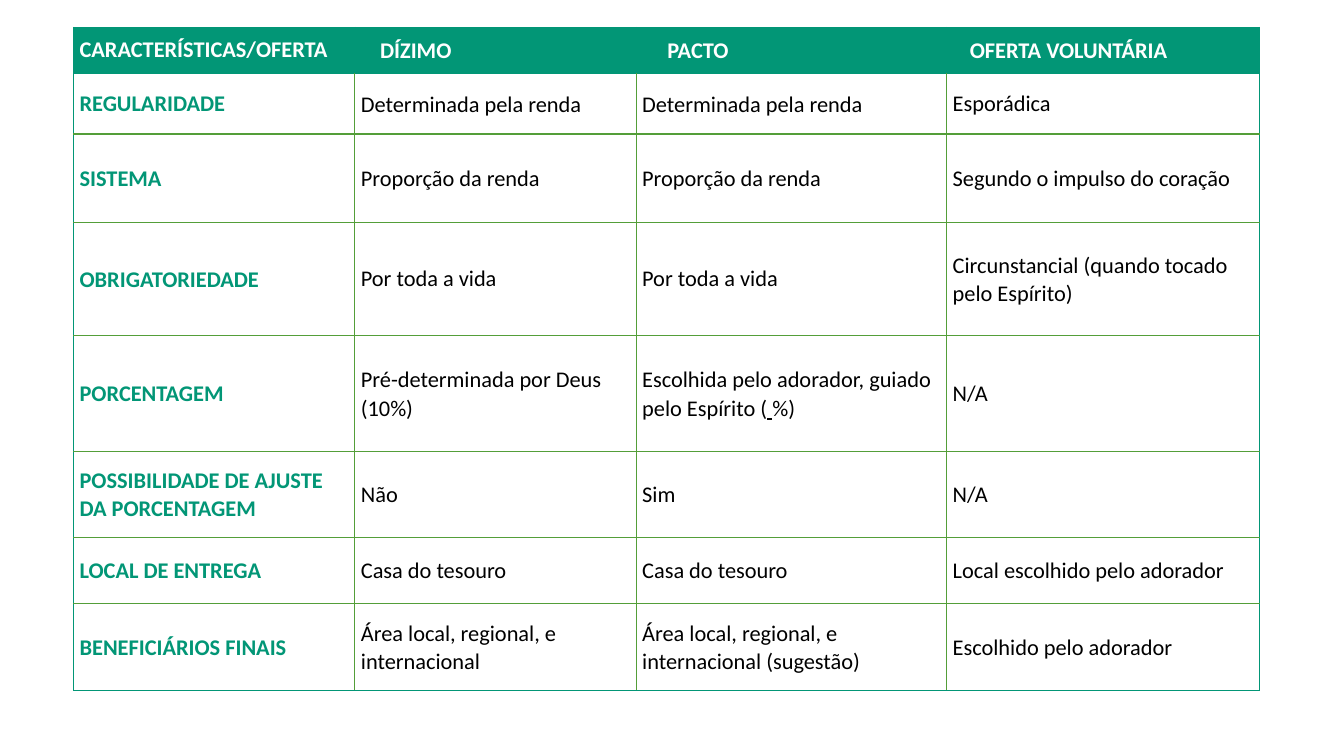
from dataclasses import dataclass

from lxml.etree import SubElement
from pptx import Presentation
from pptx.dml.color import RGBColor
from pptx.enum.text import MSO_ANCHOR
from pptx.oxml.ns import qn
from pptx.table import _Cell
from pptx.util import Inches, Pt

TEAL = RGBColor(0x02, 0x96, 0x76)
GREEN = RGBColor(0x54, 0x9E, 0x39)
WHITE = RGBColor(0xFF, 0xFF, 0xFF)
BLACK = RGBColor(0x00, 0x00, 0x00)

COLUMN_WIDTHS = [2.79, 2.79, 3.08, 3.1]
ROW_HEIGHTS = [0.46, 0.6, 0.88, 1.12, 1.15, 0.85, 0.66, 0.86]
UNDERLINE_MARK = "|"


@dataclass(frozen=True)
class TextStyle:
    color: RGBColor
    bold: bool
    space_before: float
    line_spacing: float = 1.0
    margin: float = 0.06
    indent: float = 0.0


HEADER_STYLES = [
    TextStyle(WHITE, True, 2.8, 0.9),
    TextStyle(WHITE, True, 2.3, margin=0.25),
    TextStyle(WHITE, True, 2.3, margin=0.31),
    TextStyle(WHITE, True, 2.3, 1.03, margin=0.1, indent=0.13),
]

ROWS = [
    ["CARACTERÍSTICAS/OFERTA", "DÍZIMO", "PACTO", "OFERTA VOLUNTÁRIA"],
    ["REGULARIDADE", "Determinada pela renda", "Determinada pela renda", "Esporádica"],
    ["SISTEMA", "Proporção da renda", "Proporção da renda", "Segundo o impulso do coração"],
    ["OBRIGATORIEDADE", "Por toda a vida", "Por toda a vida",
     "Circunstancial (quando tocado pelo Espírito)"],
    ["PORCENTAGEM", "Pré-determinada por Deus (10%)",
     "Escolhida pelo adorador, guiado pelo Espírito (| |%)", "N/A"],
    ["POSSIBILIDADE DE AJUSTE DA PORCENTAGEM", "Não", "Sim", "N/A"],
    ["LOCAL DE ENTREGA", "Casa do tesouro", "Casa do tesouro", "Local escolhido pelo adorador"],
    ["BENEFICIÁRIOS FINAIS", "Área local, regional, e internacional",
     "Área local, regional, e internacional (sugestão)", "Escolhido pelo adorador"],
]


def style_for(row: int, column: int, text: str) -> TextStyle:
    """Longer labels and answers get slightly looser lines."""
    if row == 0:
        return HEADER_STYLES[column]
    if column == 0:
        return TextStyle(TEAL, True, 2.1, 1.03 if len(text) > 12 else 1.0)
    return TextStyle(BLACK, False, 2.3, 1.05 if len(text) > 15 else 1.0)


def write_text(cell: _Cell, text: str, style: TextStyle) -> None:
    """Write the text, underlining whatever stands between two marks."""
    cell.vertical_anchor = MSO_ANCHOR.MIDDLE
    cell.margin_left = cell.margin_right = cell.margin_top = cell.margin_bottom = 0
    para = cell.text_frame.paragraphs[0]
    para.space_before = Pt(style.space_before)
    para.line_spacing = style.line_spacing
    properties = para._p.get_or_add_pPr()
    properties.set("marL", str(Inches(style.margin)))
    properties.set("indent", str(Inches(style.indent)))
    for position, part in enumerate(text.split(UNDERLINE_MARK)):
        span = para.add_run()
        span.text = part
        span.font.name = "Calibri"
        span.font.size = Pt(16)
        span.font.bold = style.bold
        span.font.color.rgb = style.color
        if position % 2:
            span.font.underline = True


def draw_borders(cell: _Cell, row: int, column: int) -> None:
    """Thin teal on the outer frame and header, green between the other cells."""
    header = row == 0
    teal_sides = {
        "lnL": header or column == 0,
        "lnR": header or column == len(COLUMN_WIDTHS) - 1,
        "lnT": row <= 1,
        "lnB": header or row == len(ROW_HEIGHTS) - 1,
    }
    properties = cell._tc.get_or_add_tcPr()
    for side, teal in teal_sides.items():
        line = SubElement(properties, qn(f"a:{side}"), w=str(Pt(0.5 if teal else 1)))
        fill = SubElement(line, qn("a:solidFill"))
        SubElement(fill, qn("a:srgbClr"), val=str(TEAL if teal else GREEN))


def main() -> None:
    deck = Presentation()
    deck.slide_width, deck.slide_height = Inches(13.33), Inches(7.5)
    page = deck.slides.add_slide(deck.slide_layouts[6])
    table = page.shapes.add_table(
        len(ROW_HEIGHTS), len(COLUMN_WIDTHS), Inches(0.73), Inches(0.27),
        Inches(sum(COLUMN_WIDTHS)), Inches(sum(ROW_HEIGHTS)),
    ).table
    table.first_row = table.horz_banding = False
    for column, width in zip(table.columns, COLUMN_WIDTHS):
        column.width = Inches(width)
    for row, height in zip(table.rows, ROW_HEIGHTS):
        row.height = Inches(height)

    for row, texts in enumerate(ROWS):
        for column, text in enumerate(texts):
            cell = table.cell(row, column)
            write_text(cell, text, style_for(row, column, text))
            draw_borders(cell, row, column)
            if row == 0:
                cell.fill.solid()
                cell.fill.fore_color.rgb = TEAL
            else:
                cell.fill.background()
    deck.save("out.pptx")


if __name__ == "__main__":
    main()
